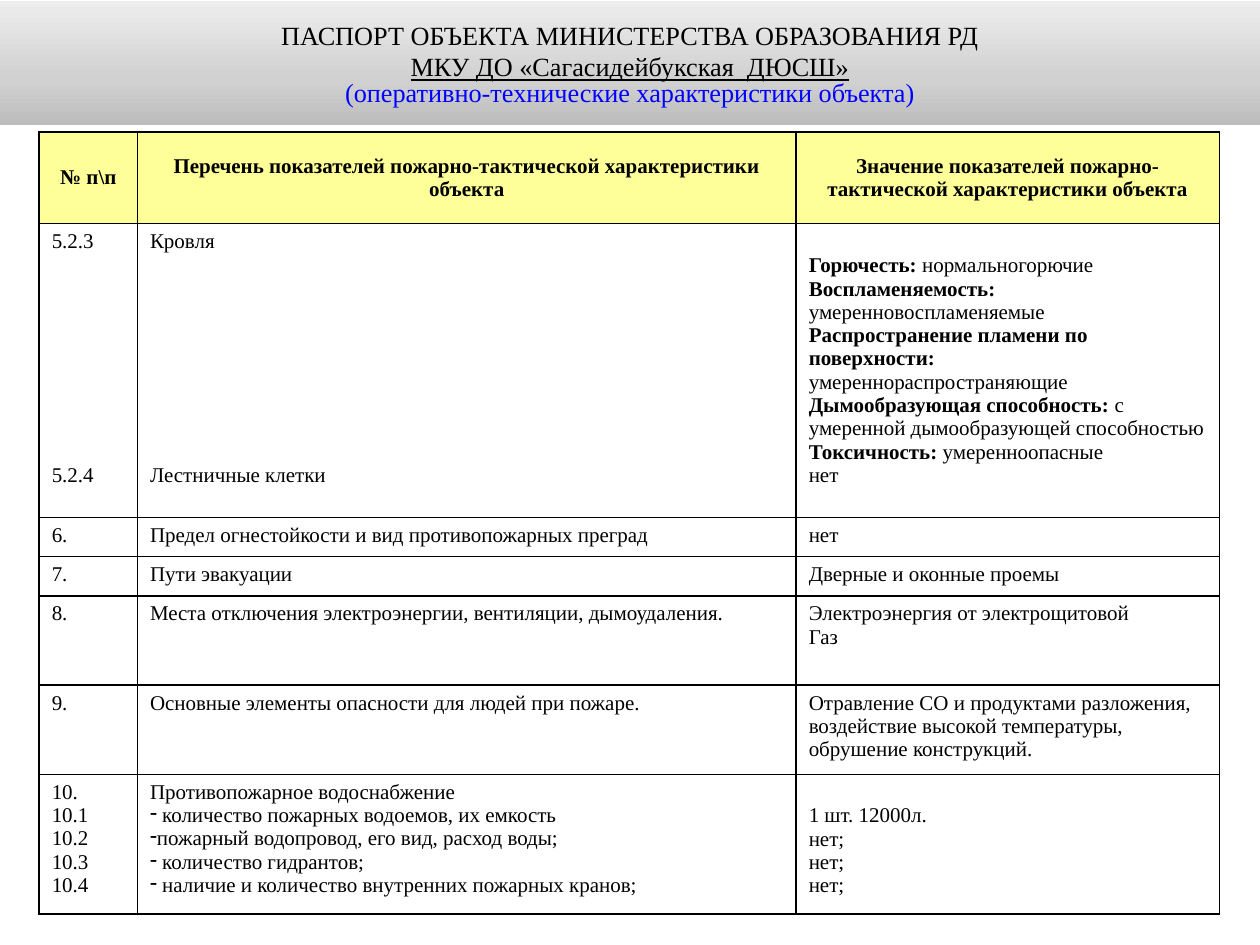
"""Build a slide with a table of fire-safety characteristics of a facility."""
from copy import deepcopy

from lxml.etree import SubElement
from pptx import Presentation
from pptx.dml.color import RGBColor
from pptx.enum.text import MSO_ANCHOR as Anchor, MSO_AUTO_SIZE as AutoSize, PP_ALIGN as Align
from pptx.oxml.ns import qn
from pptx.util import Cm, Pt

FONT = "Times New Roman"
BLACK, BLUE, WHITE, YELLOW = "000000", "0000FF", "FFFFFF", "FFFF99"
GRADIENT = [(0, "BCBCBC"), (0.35, "D0D0D0"), (1, "EDEDED")]

TITLE = [
    ("ПАСПОРТ ОБЪЕКТА МИНИСТЕРСТВА ОБРАЗОВАНИЯ РД", BLACK, False, 1.0),
    ("МКУ ДО «Сагасидейбукская  ДЮСШ»", BLACK, True, 1.0),
    ("(оперативно-технические характеристики объекта)", BLUE, False, 0.8),
]
HEADER = [
    "№ п\\п",
    "Перечень показателей пожарно-тактической характеристики объекта",
    "Значение показателей пожарно-тактической характеристики объекта",
]
ROOF_VALUES = [
    ("Горючесть:", " нормальногорючие"),
    ("Воспламеняемость: ", "умеренновоспламеняемые"),
    ("Распространение пламени по поверхности:", ""),
    ("", "умереннораспространяющие"),
    ("Дымообразующая способность: ", "с умеренной дымообразующей способностью"),
    ("Токсичность:", " умеренноопасные"),
    "нет",
]
WATER_ITEMS = [
    "Противопожарное водоснабжение",
    " количество пожарных водоемов, их емкость",
    "пожарный водопровод, его вид, расход воды;",
    " количество гидрантов;",
    " наличие и количество внутренних пожарных кранов;",
]
ROWS = [
    [["5.2.3", "5.2.4"], ["Кровля", "Лестничные клетки"], ROOF_VALUES],
    [["6."], ["Предел огнестойкости и вид противопожарных преград"], ["нет"]],
    [["7."], ["Пути эвакуации"], ["Дверные и оконные проемы"]],
    [["8."], ["Места отключения электроэнергии, вентиляции, дымоудаления."],
     ["Электроэнергия от электрощитовой", "Газ"]],
    [["9."], ["Основные элементы опасности для людей при пожаре."],
     ["Отравление СО и продуктами разложения, воздействие высокой температуры, "
      "обрушение конструкций."]],
    [["10.", "10.1", "10.2", "10.3", "10.4"], WATER_ITEMS,
     ["1 шт. 12000л.", "нет;", "нет;", "нет;"]],
]
COL_WIDTHS = [1.98, 13.28, 8.53]
ROW_HEIGHTS = [1.85, 5.92, 0.79, 0.79, 1.8, 1.8, 2.82]


def rgb(value):
    return RGBColor.from_string(value)


def style_run(r, size, color=BLACK, bold=False, underline=False):
    r.font.name, r.font.size = FONT, Pt(size)
    r.font.bold, r.font.underline = bold, underline
    r.font.color.rgb = rgb(color)


def fill_gradient(sp):
    sp.fill.gradient()
    sp.fill.gradient_angle = 90
    gs_list = sp.fill.gradient_stops[0]._gs.getparent()
    gs_list.append(deepcopy(gs_list[0]))
    for stop, (position, color) in zip(sp.fill.gradient_stops, GRADIENT):
        stop.position = position
        stop.color.rgb = rgb(color)


def add_title(s):
    sp = s.shapes.title
    sp.left, sp.top, sp.width, sp.height = Cm(0), Cm(0.03), Cm(25.4), Cm(2.49)
    fill_gradient(sp)
    tf = sp.text_frame
    tf.auto_size, tf.word_wrap, tf.vertical_anchor = AutoSize.NONE, True, Anchor.MIDDLE
    tf.text = "\n".join(line[0] for line in TITLE)
    for p, (_, color, underline, spacing) in zip(tf.paragraphs, TITLE):
        p.alignment, p.line_spacing = Align.CENTER, spacing
        style_run(p.runs[0], 15, color, underline=underline)


def set_borders(cell):
    tc_pr = cell._tc.get_or_add_tcPr()
    for index, side in enumerate(("lnL", "lnR", "lnT", "lnB")):
        ln = SubElement(tc_pr, qn(f"a:{side}"), w=str(Pt(1)))
        SubElement(SubElement(ln, qn("a:solidFill")), qn("a:srgbClr"), val=BLACK)
        tc_pr.insert(index, ln)


def add_dash(p):
    p_pr = p._p.get_or_add_pPr()
    p_pr.set("marL", "0")
    p_pr.set("indent", "0")
    SubElement(p_pr, qn("a:buChar"), char="-")


def fill_cell(cell, lines, fill=WHITE, header=False):
    cell.fill.solid()
    cell.fill.fore_color.rgb = rgb(fill)
    set_borders(cell)
    cell.vertical_anchor = Anchor.MIDDLE if header else Anchor.TOP
    tf = cell.text_frame
    for i, line in enumerate(lines):
        p = tf.add_paragraph() if i else tf.paragraphs[0]
        p.alignment = Align.CENTER if header else Align.LEFT
        label, value = line if isinstance(line, tuple) else ("", line)
        for text, bold in ((label, True), (value, header)):
            if text:
                r = p.add_run()
                r.text = text
                style_run(r, 12, bold=bold)


def add_table(s):
    shape = s.shapes.add_table(len(ROW_HEIGHTS), len(COL_WIDTHS), Cm(0.79), Cm(2.66),
                               Cm(sum(COL_WIDTHS)), Cm(sum(ROW_HEIGHTS)))
    table = shape.table
    table.first_row = table.horz_banding = False
    for column, width in zip(table.columns, COL_WIDTHS):
        column.width = Cm(width)
    for row, height in zip(table.rows, ROW_HEIGHTS):
        row.height = Cm(height)
    for col, text in enumerate(HEADER):
        fill_cell(table.cell(0, col), [text], YELLOW, header=True)
    for row, cells in enumerate(ROWS, 1):
        for col, lines in enumerate(cells):
            fill_cell(table.cell(row, col), lines)
    for col in (0, 1):
        table.cell(1, col).text_frame.paragraphs[1].space_before = Pt(120)
    table.cell(1, 2).vertical_anchor = Anchor.MIDDLE
    for p in table.cell(6, 1).text_frame.paragraphs[1:]:
        add_dash(p)
    table.cell(6, 2).margin_top = Cm(0.6)


def main():
    prs = Presentation()
    prs.slide_width, prs.slide_height = Cm(25.4), Cm(19.05)
    s = prs.slides.add_slide(prs.slide_layouts[5])
    add_title(s)
    add_table(s)
    prs.save("out.pptx")


if __name__ == "__main__":
    main()
